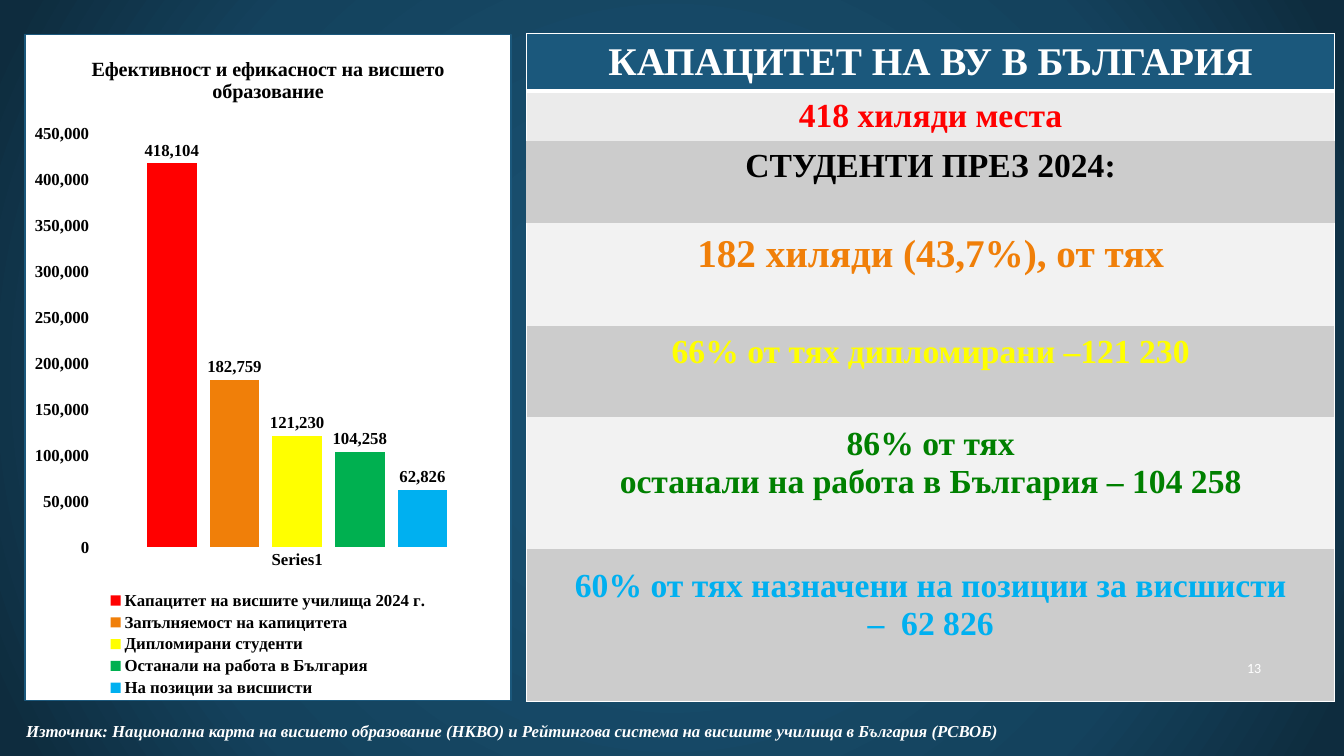
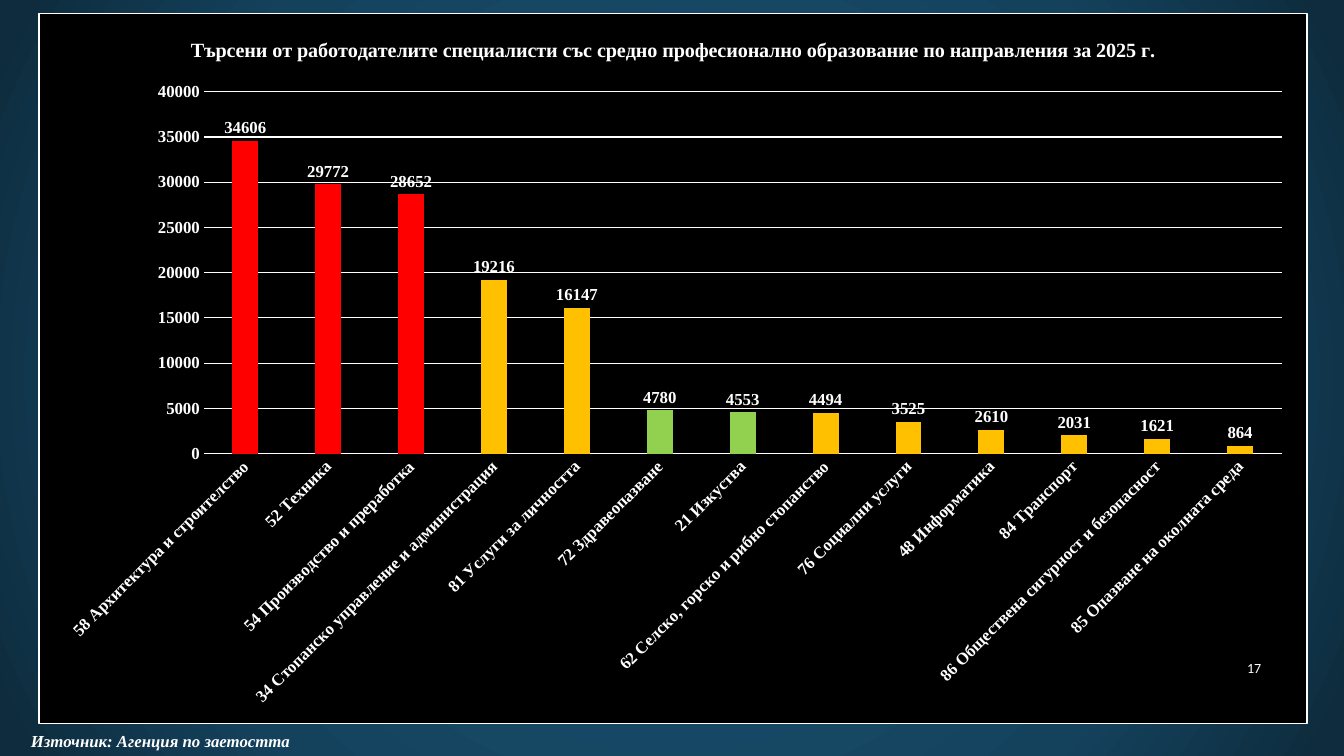
from dataclasses import dataclass

from lxml import etree
from pptx import Presentation
from pptx.chart.data import CategoryChartData
from pptx.dml.color import RGBColor
from pptx.enum import chart as ec, text as et
from pptx.oxml import parse_xml
from pptx.oxml.ns import nsdecls, qn
from pptx.util import Pt


@dataclass(frozen=True)
class Theme:
    serif: str = "Times New Roman"
    sans: str = "Calibri"
    backdrop: tuple = ((0, "184E6E"), (23, "184E6E"), (69, "14425D"), (97, "0E2C3E"))
    navy: str = "1B587C"
    white: str = "FFFFFF"
    black: str = "000000"
    red: str = "FF0000"
    orange: str = "F07F09"
    yellow: str = "FFFF00"
    green: str = "00B050"
    dark_green: str = "008000"
    sky: str = "00B0F0"
    amber: str = "FFC000"
    lime: str = "92D050"
    pale: str = "EBEBEB"
    light: str = "F2F2F2"
    grey: str = "CCCCCC"
    number: float = 10
    small: float = 12
    chart_title: float = 14.4
    body: float = 24
    head: float = 28


T = Theme()


def style(font, size=T.small, color=T.white, name=T.serif, bold=True, italic=False):
    font.size, font.name, font.bold, font.italic = Pt(size), name, bold, italic
    font.color.rgb = RGBColor.from_string(color)


def write(tf, value, align=et.PP_ALIGN.LEFT, **kw):
    """Fill a text frame, one paragraph per line of value."""
    for i, line in enumerate(value.split("\n")):
        p = tf.paragraphs[0] if i == 0 else tf.add_paragraph()
        p.alignment = align
        r = p.add_run()
        r.text = line
        style(r.font, **kw)


def solid(fill, color):
    fill.solid()
    fill.fore_color.rgb = RGBColor.from_string(color)


def place(layout_owner, x, y, w, h):
    """Fix the inner plot area, in fractions of the chart."""
    for old in layout_owner.findall(qn("c:layout")):
        layout_owner.remove(old)
    parts = "".join(f'<c:{k} val="{v}"/>' for k, v in
                    (("layoutTarget", "inner"), ("xMode", "edge"), ("yMode", "edge"),
                     ("x", x), ("y", y), ("w", w), ("h", h)))
    layout_owner.insert(0, parse_xml(
        f'<c:layout {nsdecls("c")}><c:manualLayout>{parts}</c:manualLayout></c:layout>'))


def cell_borders(cell, widths):
    """Draw white borders; a side missing from widths gets none."""
    pr = cell._tc.get_or_add_tcPr()
    for i, side in enumerate("LRTB"):
        ln = etree.Element(qn(f"a:ln{side}"))
        if side in widths:
            ln.set("w", str(Pt(widths[side])))
            paint = etree.SubElement(ln, qn("a:solidFill"))
            etree.SubElement(paint, qn("a:srgbClr"), val=T.white)
        else:
            etree.SubElement(ln, qn("a:noFill"))
        pr.insert(i, ln)


class Deck:
    def __init__(self):
        self.prs = Presentation()
        self.prs.slide_width, self.prs.slide_height = Pt(960), Pt(540)
        self.s = None
        self.paint_backdrop()

    def paint_backdrop(self):
        """Put the radial gradient on the master, for all slides."""
        master = self.prs.slide_master
        master.background.fill.gradient()
        old = next(master._element.cSld.iter(qn("a:gradFill")))
        stops = "".join(f'<a:gs pos="{pos * 1000}"><a:srgbClr val="{c}"/></a:gs>'
                        for pos, c in T.backdrop)
        old.getparent().replace(old, parse_xml(
            f'<a:gradFill {nsdecls("a")} rotWithShape="1"><a:gsLst>{stops}</a:gsLst>'
            '<a:path path="circle"><a:fillToRect l="50000" t="50000" r="50000" b="50000"/>'
            '</a:path></a:gradFill>'))

    def add_slide(self):
        self.s = self.prs.slides.add_slide(self.prs.slide_layouts[6])

    def text(self, value, x, y, w, h, wrap=True, anchor=et.MSO_ANCHOR.TOP, **kw):
        tf = self.s.shapes.add_textbox(Pt(x), Pt(y), Pt(w), Pt(h)).text_frame
        tf.word_wrap, tf.vertical_anchor = wrap, anchor
        write(tf, value, **kw)

    def source(self, value, x, y, w):
        self.text(value, x, y, w, 21.5, wrap=False, italic=True)

    def slide_number(self, n):
        self.text(str(n), 808.5, 462, 99.5, 29.5, anchor=et.MSO_ANCHOR.MIDDLE,
                  align=et.PP_ALIGN.RIGHT, size=T.number, name=T.sans, bold=False)

    def table(self, rows, x, y, w):
        """Rows hold text, height, fill, borders, room below and font settings."""
        height = sum(row[1] for row in rows)
        tbl = self.s.shapes.add_table(len(rows), 1, Pt(x), Pt(y), Pt(w), Pt(height)).table
        for i, (value, h, fill, borders, below, kw) in enumerate(rows):
            tbl.rows[i].height = Pt(h)
            cell = tbl.cell(i, 0)
            solid(cell.fill, fill)
            cell_borders(cell, borders)
            cell.margin_bottom = Pt(below)
            cell.vertical_anchor = et.MSO_ANCHOR.MIDDLE
            write(cell.text_frame, value, align=et.PP_ALIGN.CENTER, **kw)

    def column_chart(self, title, cats, series, box, plot, ink, fill, border, border_width,
                     overlap=0, fmt="General"):
        data = CategoryChartData()
        data.categories = cats
        for name, vals in series:
            data.add_series(name, vals)
        chart = self.s.shapes.add_chart(ec.XL_CHART_TYPE.COLUMN_CLUSTERED,
                                        *map(Pt, box), data).chart
        style(chart.font, color=ink)
        chart._chartSpace.find(qn("c:chart")).addnext(parse_xml(
            f'<c:spPr {nsdecls("c", "a")}><a:solidFill><a:srgbClr val="{fill}"/></a:solidFill>'
            f'<a:ln w="{Pt(border_width)}"><a:solidFill><a:srgbClr val="{border}"/>'
            '</a:solidFill></a:ln></c:spPr>'))
        chart.has_legend = False
        chart.has_title = True
        write(chart.chart_title.text_frame, title, align=et.PP_ALIGN.CENTER,
              size=T.chart_title, color=ink)
        chart.chart_title.include_in_layout = False

        val = chart.value_axis
        val.minimum_scale = 0
        val.tick_labels.number_format = fmt
        val.tick_labels.number_format_is_linked = False
        val.format.line.fill.background()
        for axis in (chart.category_axis, val):
            axis.major_tick_mark = axis.minor_tick_mark = ec.XL_TICK_MARK.NONE
            style(axis.tick_labels.font, color=ink)
        for line in (chart.category_axis.format.line, val.major_gridlines.format.line):
            solid(line.fill, T.white)
            line.width = Pt(0.75)

        bars = chart.plots[0]
        bars.gap_width, bars.overlap, bars.vary_by_categories = 219, overlap, False
        for one in bars.series:
            labels = one.data_labels
            labels.show_value = True
            labels.position = ec.XL_LABEL_POSITION.OUTSIDE_END
            labels.number_format, labels.number_format_is_linked = fmt, False
            style(labels.font, color=ink)
        place(chart._chartSpace.find(".//" + qn("c:plotArea")), *plot)
        return chart


def capacity_slide(deck):
    deck.add_slide()
    groups = (("Капацитет на висшите училища 2024 г.", 418104, T.red),
              ("Запълняемост на капицитета", 182759, T.orange),
              ("Дипломирани студенти", 121230, T.yellow),
              ("Останали на работа в България", 104258, T.green),
              ("На позиции за висшисти", 62826, T.sky))
    chart = deck.column_chart(
        "Ефективност и ефикасност на висшето образование", ["Series1"],
        [(name, [n]) for name, n, _ in groups], box=(17.5, 24, 348, 477),
        plot=(0.14, 0.15, 0.84, 0.62), ink=T.black, fill=T.white, border=T.navy,
        border_width=1, overlap=-27, fmt="#,##0")
    for one, (_, _, color) in zip(chart.plots[0].series, groups):
        solid(one.format.fill, color)
    chart.has_legend = True
    chart.legend.position = ec.XL_LEGEND_POSITION.BOTTOM
    chart.legend.include_in_layout = False
    style(chart.legend.font, color=T.black)

    def body(color, size=T.body):
        return dict(color=color, size=size)

    open_top = dict(L=1, R=1, B=1)
    tight, roomy = 3.6, 32
    deck.table((
        ("КАПАЦИТЕТ НА ВУ В БЪЛГАРИЯ", 41, T.navy, dict(L=1, T=1, R=1, B=3), tight,
         body(T.white, T.head)),
        ("418 хиляди места", 36, T.pale, dict(L=1, T=3, R=1), tight, body(T.red)),
        ("СТУДЕНТИ ПРЕЗ 2024:", 58, T.grey, {}, 26, body(T.black)),
        ("182 хиляди (43,7%), от тях", 74, T.light, open_top, roomy, body(T.orange, T.head)),
        ("66% от тях дипломирани –121 230", 65, T.grey, open_top, roomy, body(T.yellow)),
        ("86% от тях\nостанали на работа в България – 104 258", 94, T.light, open_top, roomy,
         body(T.dark_green)),
        ("60% от тях назначени на позиции за висшисти\n–  62 826", 109, T.grey, open_top,
         roomy, body(T.sky)),
    ), 376, 24, 577.5)
    deck.source("Източник: Национална карта на висшето образование (НКВО) и Рейтингова "
                "система на висшите училища в България (РСВОБ)", 11.5, 511, 716)
    deck.slide_number(13)


def demand_slide(deck):
    deck.add_slide()
    demand = (("58 Архитектура и строителство", 34606, T.red),
              ("52 Техника", 29772, T.red),
              ("54 Производство и преработка", 28652, T.red),
              ("34 Стопанско управление и администрация", 19216, T.amber),
              ("81 Услуги за личността", 16147, T.amber),
              ("72 Здравеопазване", 4780, T.lime),
              ("21 Изкуства", 4553, T.lime),
              ("62 Селско, горско и рибно стопанство", 4494, T.amber),
              ("76 Социални услуги", 3525, T.amber),
              ("48 Информатика", 2610, T.amber),
              ("84 Транспорт", 2031, T.amber),
              ("86 Обществена сигурност и безопасност", 1621, T.amber),
              ("85 Опазване на околната среда", 864, T.amber))
    cats, vals, colors = zip(*demand)
    chart = deck.column_chart(
        "Търсени от работодателите специалисти със средно професионално образование "
        "по направления за 2025 г.", cats, [("Series 1", vals)],
        box=(27.5, 9.5, 906.5, 507.5), plot=(0.13, 0.11, 0.85, 0.51), ink=T.white,
        fill=T.black, border=T.white, border_width=0.75)
    for i, color in enumerate(colors):
        solid(chart.plots[0].series[0].points[i].format.fill, color)
    slant = chart.category_axis._element.find(qn("c:txPr")).find(qn("a:bodyPr"))
    slant.set("rot", str(-45 * 60000))
    slant.set("vert", "horz")
    deck.source("Източник: Агенция по заетостта", 15, 518.5, 204.5)
    deck.slide_number(17)


def main():
    deck = Deck()
    capacity_slide(deck)
    demand_slide(deck)
    deck.prs.save("out.pptx")


if __name__ == "__main__":
    main()
